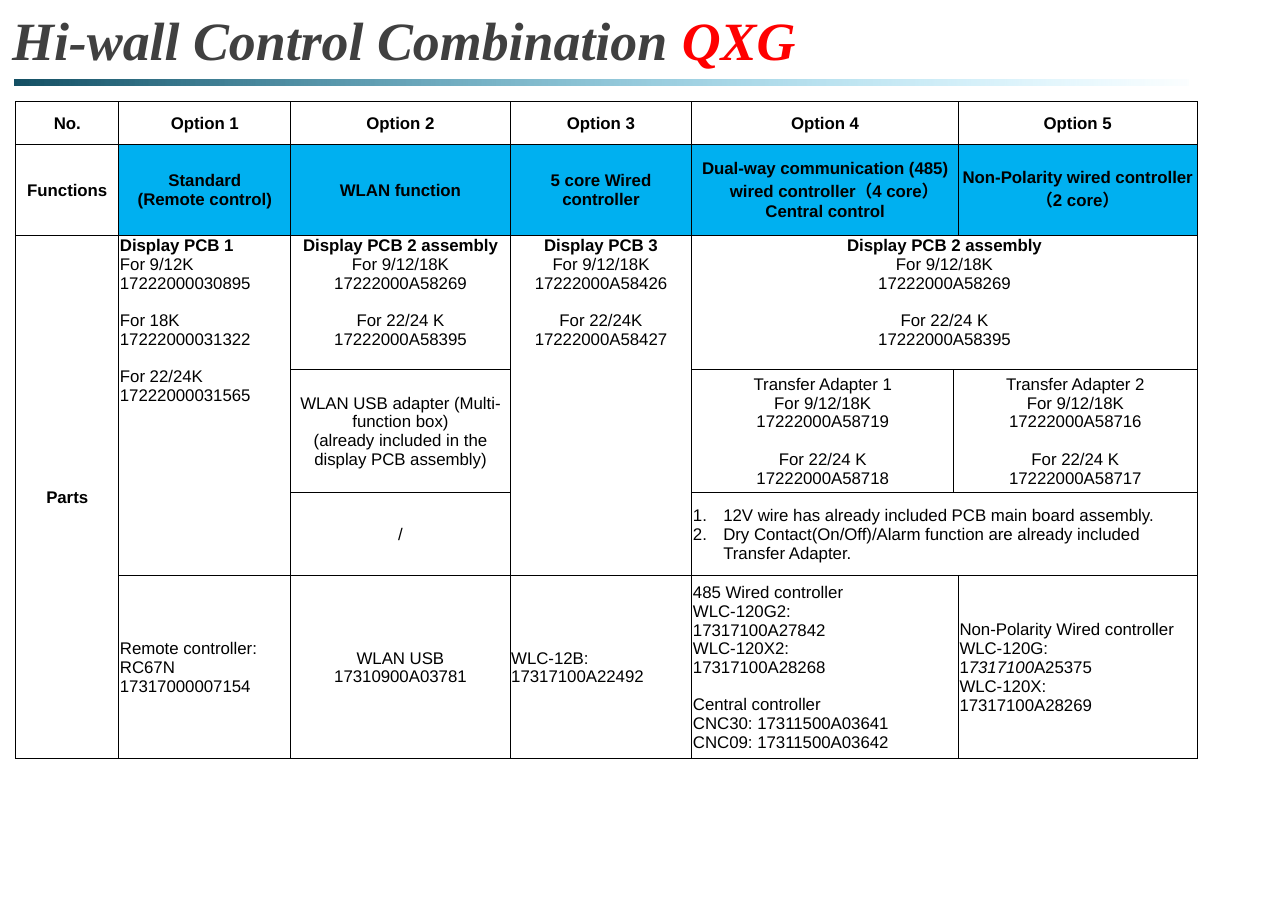
from lxml import etree
from pptx import Presentation
from pptx.dml.color import RGBColor
from pptx.enum.shapes import MSO_SHAPE
from pptx.enum.text import MSO_ANCHOR, MSO_AUTO_SIZE, PP_ALIGN
from pptx.oxml.ns import qn
from pptx.util import Inches, Pt

BLACK = RGBColor(0x00, 0x00, 0x00)
WHITE = RGBColor(0xFF, 0xFF, 0xFF)
GREY = RGBColor(0x40, 0x40, 0x40)
RED = RGBColor(0xFF, 0x00, 0x00)
BLUE = RGBColor(0x00, 0xB0, 0xF0)
TEAL = RGBColor(0x14, 0x50, 0x64)
CYAN = RGBColor(0x33, 0xCC, 0xFF)

# Content
TITLE = [("Hi-wall Control Combination ", GREY), ("QXG", RED)]
COLUMN_WIDTHS = [0.85, 1.42, 1.81, 1.5, 2.16, 0.04, 1.97]
ROW_HEIGHTS = [0.35, 0.75, 1.11, 1.01, 0.69, 1.51]

HEADER = dict(bold=True)
FUNCTION = dict(bold=True, fill=BLUE)
DISPLAY = dict(anchor=MSO_ANCHOR.TOP, bold_first=True)
DISPLAY_LEFT = dict(DISPLAY, align=PP_ALIGN.LEFT)
CENTRED = {}
LEFT = dict(align=PP_ALIGN.LEFT)
NUMBERED = dict(LEFT, numbered=True)


def part_lines(name, small_units, small_code, large_units, large_code):
    """Part name and its two codes; an empty line marks a gap."""
    return [name, f"For {small_units}", small_code, "", f"For {large_units}", large_code]


ASSEMBLY = part_lines("Display PCB 2 assembly", "9/12/18K", "17222000A58269",
                      "22/24 K", "17222000A58395")

# (row, column, rows spanned, columns spanned, style, lines)
CELLS = [
    (0, 0, 1, 1, HEADER, ["No."]),
    (0, 1, 1, 1, HEADER, ["Option 1"]),
    (0, 2, 1, 1, HEADER, ["Option 2"]),
    (0, 3, 1, 1, HEADER, ["Option 3"]),
    (0, 4, 1, 2, HEADER, ["Option 4"]),
    (0, 6, 1, 1, HEADER, ["Option 5"]),
    (1, 0, 1, 1, HEADER, ["Functions"]),
    (1, 1, 1, 1, FUNCTION, ["Standard", "(Remote control)"]),
    (1, 2, 1, 1, FUNCTION, ["WLAN function"]),
    (1, 3, 1, 1, FUNCTION, ["5 core Wired controller"]),
    (1, 4, 1, 2, dict(FUNCTION, indented_line=1),
     ["Dual-way communication (485)", "wired controller（4 core）", "Central control"]),
    (1, 6, 1, 1, FUNCTION, ["Non-Polarity wired controller（2 core）"]),
    (2, 0, 4, 1, HEADER, ["Parts"]),
    (2, 1, 3, 1, DISPLAY_LEFT,
     part_lines("Display PCB 1", "9/12K", "17222000030895", "18K", "17222000031322")
     + ["", "For 22/24K", "17222000031565"]),
    (2, 2, 1, 1, DISPLAY, ASSEMBLY),
    (2, 3, 3, 1, DISPLAY, part_lines("Display PCB 3", "9/12/18K", "17222000A58426",
                                     "22/24K", "17222000A58427")),
    (2, 4, 1, 3, DISPLAY, ASSEMBLY),
    (3, 2, 1, 1, CENTRED, ["WLAN USB adapter (Multi-function box)",
                           "(already included in the display PCB assembly)"]),
    (3, 4, 1, 1, CENTRED, part_lines("Transfer Adapter 1", "9/12/18K", "17222000A58719",
                                     "22/24 K", "17222000A58718")),
    (3, 5, 1, 2, CENTRED, part_lines("Transfer Adapter 2", "9/12/18K", "17222000A58716",
                                     "22/24 K", "17222000A58717")),
    (4, 2, 1, 1, CENTRED, ["/"]),
    (4, 4, 1, 3, NUMBERED, [
        "12V wire has already included PCB main board assembly.",
        "Dry Contact(On/Off)/Alarm function are already included Transfer Adapter."]),
    (5, 1, 1, 1, LEFT, ["Remote controller:", "RC67N 17317000007154"]),
    (5, 2, 1, 1, CENTRED, ["WLAN USB", "17310900A03781"]),
    (5, 3, 1, 1, LEFT, ["WLC-12B: 17317100A22492"]),
    (5, 4, 1, 2, LEFT, [
        "485 Wired controller", "WLC-120G2:", "17317100A27842", "WLC-120X2:",
        "17317100A28268", "", "Central controller",
        "CNC30: 17311500A03641", "CNC09: 17311500A03642"]),
    (5, 6, 1, 1, LEFT, [
        "Non-Polarity Wired controller", "WLC-120G:",
        [("1", False), ("7317100", True), ("A25375", False)],
        "WLC-120X:", "17317100A28269"]),
]


def add_run(paragraph, text, **formats):
    run = paragraph.add_run()
    run.text = text
    run.font.color.rgb = formats.pop("color")
    for name, value in formats.items():
        setattr(run.font, name, value)


def set_borders(cell):
    properties = cell._tc.get_or_add_tcPr()
    for side in ("a:lnL", "a:lnR", "a:lnT", "a:lnB"):
        line = etree.SubElement(properties, qn(side), w=str(Pt(0.5)))
        solid = etree.SubElement(line, qn("a:solidFill"))
        etree.SubElement(solid, qn("a:srgbClr"), val=str(BLACK))


def write_cell(cell, lines, align=PP_ALIGN.CENTER, anchor=MSO_ANCHOR.MIDDLE, fill=WHITE,
               bold=False, bold_first=False, numbered=False, indented_line=None):
    cell.vertical_anchor = anchor
    cell.fill.solid()
    cell.fill.fore_color.rgb = fill
    frame = cell.text_frame
    gap = False
    for index, line in enumerate(lines):
        if not line:
            gap = True
            continue
        paragraph = frame.paragraphs[0] if index == 0 else frame.add_paragraph()
        paragraph.alignment = align
        if gap:
            paragraph.space_before = Pt(11)
            gap = False
        properties = paragraph._p.get_or_add_pPr()
        if numbered:
            properties.set("marL", str(Inches(0.25)))
            properties.set("indent", str(-Inches(0.25)))
            etree.SubElement(properties, qn("a:buFont"), typeface="+mj-lt")
            etree.SubElement(properties, qn("a:buAutoNum"), type="arabicPeriod")
        if index == indented_line:
            properties.set("marL", str(Inches(0.15)))
        runs = [(line, False)] if isinstance(line, str) else line
        for text, italic in runs:
            add_run(paragraph, text, name="Arial", size=Pt(10), color=BLACK,
                    bold=bold or (bold_first and index == 0), italic=italic)


def add_title(slide):
    title = slide.shapes.title
    title.left, title.top = Inches(0), Inches(0)
    title.width, title.height = Inches(8.79), Inches(0.64)
    frame = title.text_frame
    frame.auto_size = MSO_AUTO_SIZE.NONE
    frame.vertical_anchor = MSO_ANCHOR.MIDDLE
    paragraph = frame.paragraphs[0]
    paragraph.alignment = PP_ALIGN.LEFT
    for text, color in TITLE:
        add_run(paragraph, text, name="Times New Roman", size=Pt(32), color=color,
                bold=True, italic=True)


def add_title_bar(slide):
    bar = slide.shapes.add_shape(MSO_SHAPE.RECTANGLE, Inches(0.12), Inches(0.66),
                                 Inches(9.69), Inches(0.05))
    bar.shadow.inherit = False
    bar.line.fill.background()
    bar.fill.gradient()
    bar.fill.gradient_angle = 0
    for stop, color in zip(bar.fill.gradient_stops, (TEAL, CYAN)):
        stop.color.rgb = color
    end_color = bar._element.xpath(".//a:gs/a:srgbClr")[-1]
    etree.SubElement(end_color, qn("a:alpha"), val="2000")


def add_options_table(slide):
    table = slide.shapes.add_table(
        len(ROW_HEIGHTS), len(COLUMN_WIDTHS), Inches(0.13), Inches(0.84),
        Inches(sum(COLUMN_WIDTHS)), Inches(sum(ROW_HEIGHTS))).table
    table.first_row = table.horz_banding = False
    for column, width in zip(table.columns, COLUMN_WIDTHS):
        column.width = Inches(width)
    for row, height in zip(table.rows, ROW_HEIGHTS):
        row.height = Inches(height)
    for cell in table.iter_cells():
        set_borders(cell)
        cell.margin_left = cell.margin_right = cell.margin_top = Inches(0.01)
        cell.margin_bottom = 0
    for row, column, row_span, column_span, style, lines in CELLS:
        cell = table.cell(row, column)
        if row_span * column_span > 1:
            cell.merge(table.cell(row + row_span - 1, column + column_span - 1))
        write_cell(cell, lines, **style)


def main():
    presentation = Presentation()
    presentation.slide_width, presentation.slide_height = Inches(10.63), Inches(7.5)
    slide = presentation.slides.add_slide(presentation.slide_layouts[5])
    add_title(slide)
    add_title_bar(slide)
    add_options_table(slide)
    presentation.save("out.pptx")


if __name__ == "__main__":
    main()
